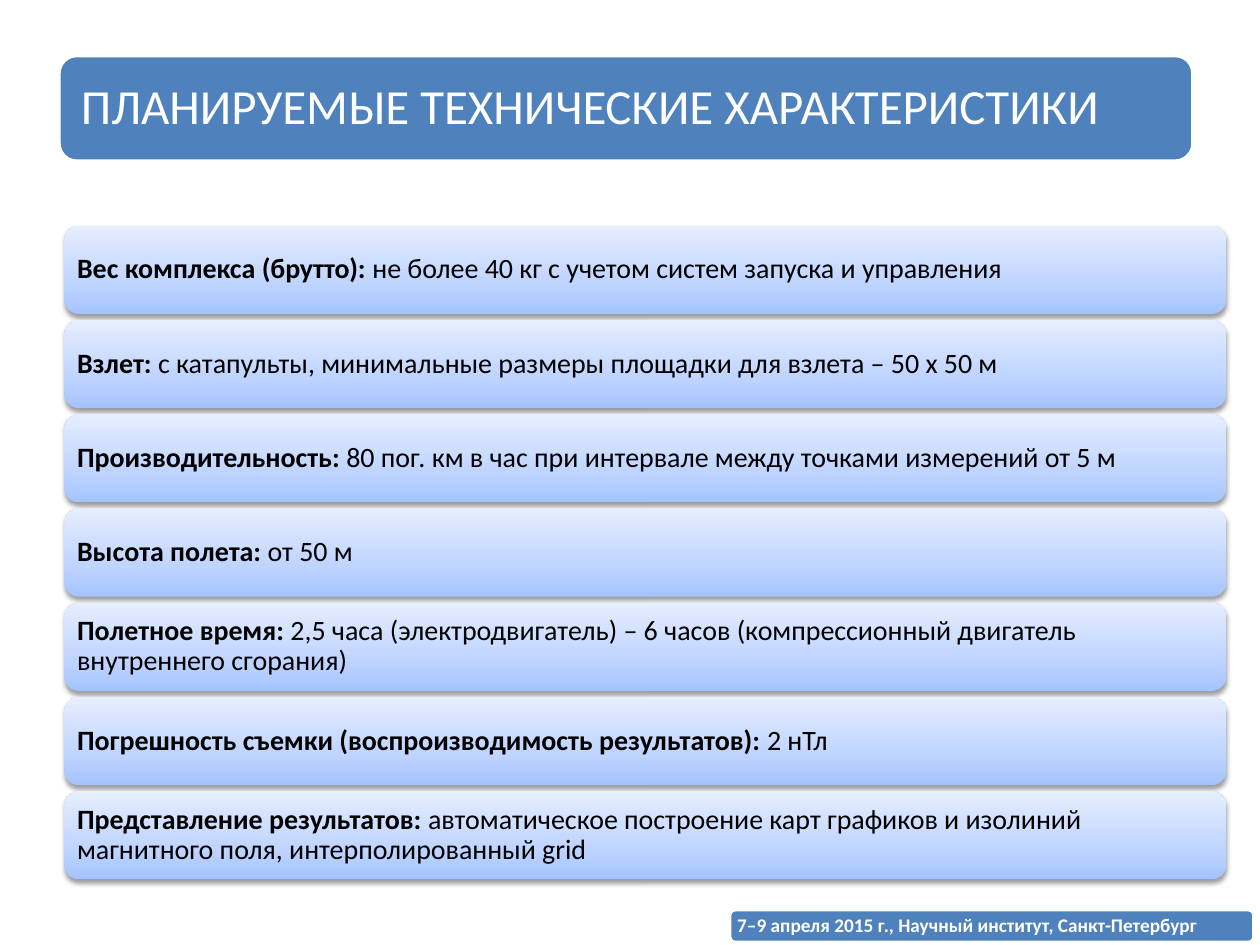
from dataclasses import dataclass

from lxml.etree import SubElement
from pptx import Presentation
from pptx.dml.color import RGBColor
from pptx.enum.shapes import MSO_SHAPE
from pptx.enum.text import MSO_ANCHOR, MSO_AUTO_SIZE, PP_ALIGN
from pptx.oxml import parse_xml
from pptx.oxml.ns import nsdecls, qn
from pptx.shapes.autoshape import Shape
from pptx.slide import Slide
from pptx.text.text import TextFrame
from pptx.util import Cm, Pt


@dataclass(frozen=True)
class Theme:
    font: str = "Calibri"
    accent: str = "4F81BD"
    light: str = "FFFFFF"
    dark: str = "000000"
    gradient: tuple[tuple[int, str], ...] = ((0, "A4C4FF"), (35, "BFD4FF"), (100, "E6EEFF"))
    title_size: int = 28
    row_size: int = 16
    footer_size: int = 11


@dataclass(frozen=True)
class Box:
    left: float
    top: float
    width: float
    height: float


@dataclass(frozen=True)
class Characteristic:
    label: str
    value: str


THEME = Theme()
TITLE_BOX = Box(1.19, 1.12, 22.86, 2.13)
FIRST_ROW = Box(1.3, 4.55, 23.42, 1.78)
ROW_PITCH = 1.9
FOOTER_BOX = Box(14.71, 18.34, 10.57, 0.66)
TITLE = "ПЛАНИРУЕМЫЕ ТЕХНИЧЕСКИЕ ХАРАКТЕРИСТИКИ"
FOOTER = "7–9 апреля 2015 г., Научный институт, Санкт-Петербург"
CHARACTERISTICS = [
    Characteristic("Вес комплекса (брутто):", "не более 40 кг с учетом систем запуска и управления"),
    Characteristic("Взлет:", "с катапульты, минимальные размеры площадки для взлета – 50 х 50 м"),
    Characteristic("Производительность:", "80 пог. км в час при интервале между точками измерений от 5 м"),
    Characteristic("Высота полета:", "от 50 м"),
    Characteristic(
        "Полетное время:",
        "2,5 часа (электродвигатель) – 6 часов (компрессионный двигатель внутреннего сгорания)",
    ),
    Characteristic("Погрешность съемки (воспроизводимость результатов):", "2 нТл"),
    Characteristic(
        "Представление результатов:",
        "автоматическое построение карт графиков и изолиний магнитного поля, интерполированный grid",
    ),
]


def place(shape: Shape, box: Box) -> None:
    shape.left, shape.top = Cm(box.left), Cm(box.top)
    shape.width, shape.height = Cm(box.width), Cm(box.height)


def add_rounded(slide: Slide, box: Box) -> Shape:
    shape = slide.shapes.add_shape(MSO_SHAPE.ROUNDED_RECTANGLE, 0, 0, 0, 0)
    place(shape, box)
    shape.shadow.inherit = False
    return shape


def add_banner(slide: Slide, box: Box) -> Shape:
    banner = add_rounded(slide, box)
    banner.fill.solid()
    banner.fill.fore_color.rgb = RGBColor.from_string(THEME.accent)
    banner.line.color.rgb = RGBColor.from_string(THEME.light)
    banner.line.width = Pt(2)
    return banner


def write_text(
    frame: TextFrame, pieces: list[tuple[str, bool]], size: int, color: str, inset: float
) -> None:
    frame.word_wrap = True
    frame.auto_size = MSO_AUTO_SIZE.NONE
    frame.vertical_anchor = MSO_ANCHOR.MIDDLE
    frame.margin_left = frame.margin_right = Cm(inset)
    frame.margin_top = frame.margin_bottom = Cm(inset)
    paragraph = frame.paragraphs[0]
    paragraph.alignment = PP_ALIGN.LEFT
    paragraph.line_spacing = 0.9
    paragraph.font.name = THEME.font
    paragraph.font.size = Pt(size)
    paragraph.font.color.rgb = RGBColor.from_string(color)
    for text, bold in pieces:
        run = paragraph.add_run()
        run.text = text
        run.font.bold = bold


def apply_gradient(shape: Shape) -> None:
    stops = "".join(
        f'<a:gs pos="{position * 1000}"><a:srgbClr val="{color}"/></a:gs>'
        for position, color in THEME.gradient
    )
    gradient = parse_xml(
        f'<a:gradFill {nsdecls("a")} rotWithShape="1"><a:gsLst>{stops}</a:gsLst>'
        '<a:lin ang="16200000" scaled="0"/></a:gradFill>'
    )
    shape.line.fill.background()
    shape.element.spPr.find(qn("a:ln")).addprevious(gradient)


def apply_shadow(shape: Shape) -> None:
    effects = shape.element.spPr.find(qn("a:effectLst"))
    shadow = SubElement(
        effects,
        qn("a:outerShdw"),
        blurRad=str(Pt(3.1)),
        dist=str(Pt(1.6)),
        dir="5400000",
        rotWithShape="0",
    )
    color = SubElement(shadow, qn("a:srgbClr"), val=THEME.dark)
    SubElement(color, qn("a:alpha"), val="38000")


def add_title(slide: Slide) -> None:
    banner = add_banner(slide, TITLE_BOX)
    title = slide.shapes.title
    place(title, Box(1.3, 1.22, 22.66, 1.93))
    write_text(title.text_frame, [(TITLE, False)], THEME.title_size, THEME.light, 0.33)
    banner.element.addnext(title.element)


def add_characteristic(slide: Slide, index: int, item: Characteristic) -> None:
    top = FIRST_ROW.top + index * ROW_PITCH
    row = add_rounded(slide, Box(FIRST_ROW.left, top, FIRST_ROW.width, FIRST_ROW.height))
    apply_gradient(row)
    apply_shadow(row)
    pieces = [(f"{item.label} ", True), (item.value, False)]
    write_text(row.text_frame, pieces, THEME.row_size, THEME.dark, 0.17)


def add_footer(slide: Slide) -> None:
    banner = add_banner(slide, FOOTER_BOX)
    write_text(banner.text_frame, [(FOOTER, True)], THEME.footer_size, THEME.light, 0.12)


def main() -> None:
    presentation = Presentation()
    presentation.slide_width, presentation.slide_height = Cm(25.4), Cm(19.05)
    slide = presentation.slides.add_slide(presentation.slide_layouts[5])
    add_title(slide)
    add_footer(slide)
    for index, item in enumerate(CHARACTERISTICS):
        add_characteristic(slide, index, item)
    presentation.save("out.pptx")


if __name__ == "__main__":
    main()
